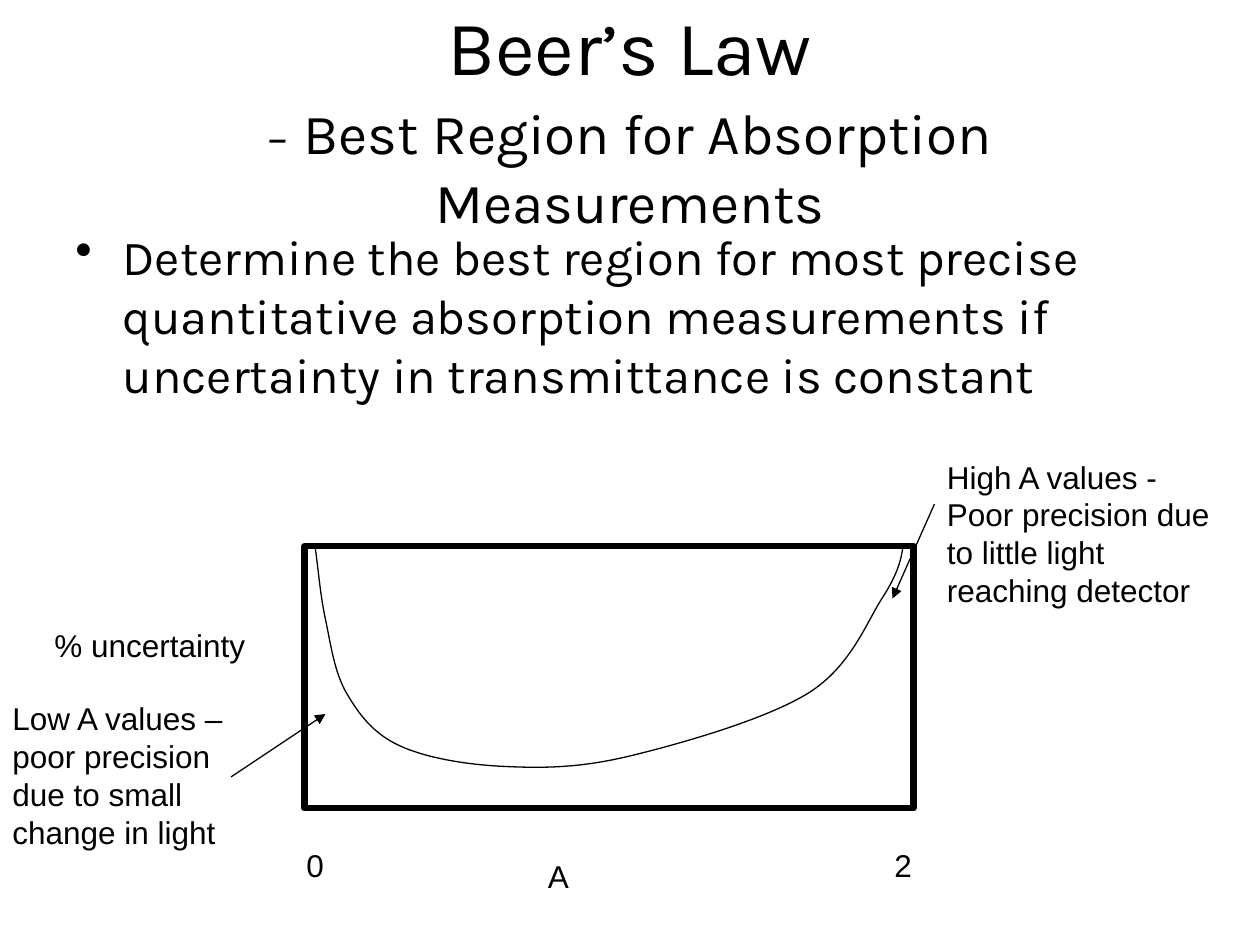
from lxml import etree
from pptx import Presentation
from pptx import util as u
from pptx.dml.color import RGBColor
from pptx.enum import shapes, text
from pptx.oxml.ns import qn

BLACK = RGBColor(0, 0, 0)
WHITE = RGBColor(255, 255, 255)


class Page:
    head = "Karla"
    body = "Arial"
    thin = 0.75
    thick = 3.5

    def __init__(self, deck):
        self.slide = deck.slides.add_slide(deck.slide_layouts[6])
        self.slide.background.fill.solid()
        self.slide.background.fill.fore_color.rgb = WHITE
        self.items = self.slide.shapes

    def ink(self, line, width):
        line.color.rgb = BLACK
        line.width = u.Pt(width)

    def frame(self, spot, font, size):
        frame = self.items.add_textbox(*map(u.Pt, spot)).text_frame
        frame.word_wrap = True
        para = frame.paragraphs[0]
        para.font.name = font
        para.font.size = u.Pt(size)
        para.font.color.rgb = BLACK
        return frame, para

    def title(self, spot, name, parts):
        frame, para = self.frame(spot, self.head, 44.1)
        frame.vertical_anchor = text.MSO_ANCHOR.MIDDLE
        para.alignment = text.PP_ALIGN.CENTER
        para.add_run().text = name
        para.add_line_break()
        for words, size in parts:
            run = para.add_run()
            run.text = words
            run.font.size = u.Pt(size)

    def bullet(self, spot, words):
        para = self.frame(spot, self.head, 28)[1]
        para.text = words
        props = para._p.get_or_add_pPr()
        props.set("marL", str(u.Pt(27)))
        props.set("indent", str(u.Pt(-27)))
        mark = etree.Element(qn("a:buChar"), char="•")
        props.insert(0, mark)

    def label(self, spot, words):
        self.frame(spot, self.body, 18)[1].text = words

    def box(self, spot):
        rect = self.items.add_shape(
            shapes.MSO_SHAPE.RECTANGLE, *map(u.Pt, spot))
        rect.shadow.inherit = False
        rect.fill.background()
        self.ink(rect.line, self.thick)

    def curve(self, start, points):
        build = self.items.build_freeform(*start, scale=u.Pt(1))
        build.add_line_segments(points, close=False)
        shape = build.convert_to_shape()
        shape.shadow.inherit = False
        shape.fill.background()
        self.ink(shape.line, self.thin)
        steps = list(shape._element.iter(qn("a:lnTo")))
        for i in range(0, len(steps), 3):
            bend = etree.Element(qn("a:cubicBezTo"))
            steps[i].addprevious(bend)
            for step in steps[i:i + 3]:
                bend.append(step[0])
                step.getparent().remove(step)

    def arrow(self, start, end):
        link = self.items.add_connector(
            shapes.MSO_CONNECTOR.STRAIGHT, *map(u.Pt, start + end))
        self.ink(link.line, self.thin)
        etree.SubElement(link.line._get_or_add_ln(),
                         qn("a:tailEnd"), type="triangle")
        etree.SubElement(link._element.spPr, qn("a:effectLst"))


def main():
    deck = Presentation()
    deck.slide_width = u.Pt(720)
    deck.slide_height = u.Pt(540)
    page = Page(deck)
    page.title((36, 21.6, 648, 90), "Beer’s Law", [
        ("–", 25.2), (" ", 36),
        ("Best Region for Absorption Measurements", 32.4)])
    page.bullet((36, 126, 648, 356.4),
                "Determine the best region for most precise quantitative "
                "absorption measurements if uncertainty in transmittance "
                "is constant")
    page.box((174, 312, 348, 150))
    page.curve((180, 312), [
        (181.5, 326), (183, 340), (186, 354),
        (189, 368), (191, 384), (198, 396),
        (205, 408), (213, 419), (228, 426),
        (243, 433), (266, 437), (288, 438),
        (310, 439), (331, 439), (360, 432),
        (389, 425), (438, 411), (462, 396),
        (486, 381), (495, 356), (504, 342),
        (513, 328), (515, 320), (516, 312)])
    for spot, words in [
        ((306, 486, 78, 28.8), "A"),
        ((24, 354, 126, 28.8), "% uncertainty"),
        ((168, 480, 36, 28.8), "0"),
        ((504, 480, 48, 28.8), "2"),
        ((534, 258, 168, 93.6),
         "High A values - Poor precision due to little light "
         "reaching detector"),
        ((0, 396, 144, 93.6),
         "Low A values – poor precision due to small change in light"),
    ]:
        page.label(spot, words)
    page.arrow((534, 288), (510, 342))
    page.arrow((132, 444), (186, 408))
    deck.save("out.pptx")


if __name__ == "__main__":
    main()
